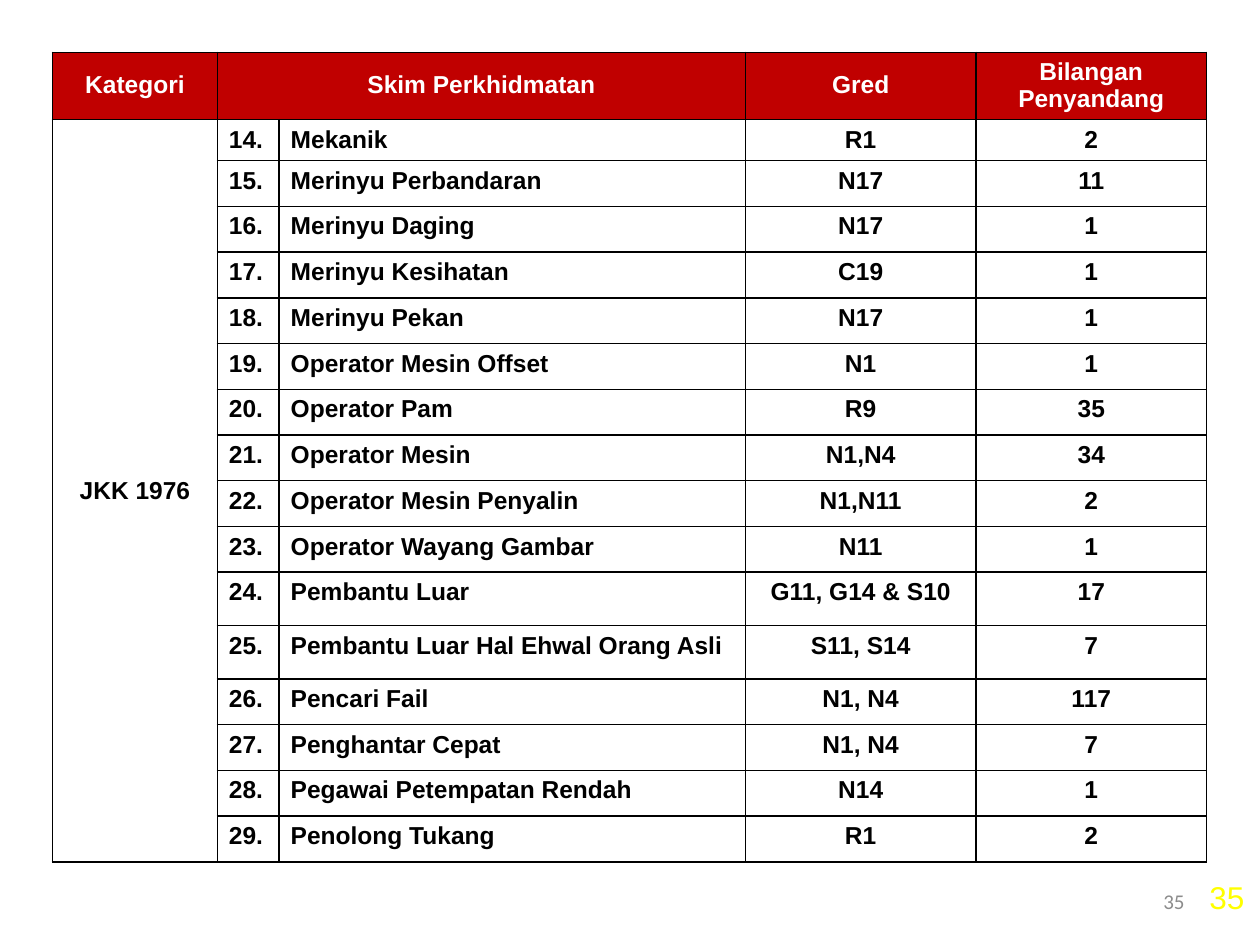
from pptx import Presentation
from pptx.dml.color import RGBColor as RGB
from pptx.enum.text import MSO_ANCHOR as Anchor, PP_ALIGN as Align
from pptx.oxml import parse_xml
from pptx.oxml.ns import nsdecls
from pptx.util import Pt

BLACK = RGB(0x00, 0x00, 0x00)
WHITE = RGB(0xFF, 0xFF, 0xFF)
RED = RGB(0xC0, 0x00, 0x00)
YELLOW = RGB(0xFF, 0xFF, 0x00)
GREY = RGB(0x8C, 0x8C, 0x8C)

HEADS = ["Kategori", "Skim Perkhidmatan", "", "Gred", "Bilangan Penyandang"]
FIRST = 14
POSTS = [
    ("Mekanik", "R1", "2"),
    ("Merinyu Perbandaran", "N17", "11"),
    ("Merinyu Daging", "N17", "1"),
    ("Merinyu Kesihatan", "C19", "1"),
    ("Merinyu Pekan", "N17", "1"),
    ("Operator Mesin Offset", "N1", "1"),
    ("Operator Pam", "R9", "35"),
    ("Operator Mesin", "N1,N4", "34"),
    ("Operator Mesin Penyalin", "N1,N11", "2"),
    ("Operator Wayang Gambar", "N11", "1"),
    ("Pembantu Luar", "G11, G14 & S10", "17"),
    ("Pembantu Luar Hal Ehwal Orang Asli", "S11, S14", "7"),
    ("Pencari Fail", "N1, N4", "117"),
    ("Penghantar Cepat", "N1, N4", "7"),
    ("Pegawai Petempatan Rendah", "N14", "1"),
    ("Penolong Tukang", "R1", "2"),
]
WIDTHS = [94.3, 35.3, 266.4, 131.8, 131.8]
TALL = {24, 25}
JUSTIFIED = range(18, 28)


def write(frame, text, size=14, font="Arial", color=BLACK, bold=False,
          align=Align.LEFT, space=None):
    para = frame.paragraphs[0]
    para.alignment = align
    para.line_spacing = space
    run = para.add_run()
    run.text = text
    run.font.size = Pt(size)
    run.font.name = font
    run.font.bold = bold
    run.font.color.rgb = color


def height(num):
    if num == FIRST:
        return 23.4
    return 30.5 if num in TALL else 26.15


class Deck:
    def __init__(self):
        self.prs = Presentation()
        self.prs.slide_width, self.prs.slide_height = Pt(720), Pt(540)
        self.slide = self.prs.slides.add_slide(self.prs.slide_layouts[6])

    def text(self, text, left, top, width, high, anchor=Anchor.TOP, **style):
        box = self.slide.shapes.add_textbox(Pt(left), Pt(top), Pt(width), Pt(high))
        frame = box.text_frame
        frame.word_wrap = True
        frame.vertical_anchor = anchor
        write(frame, text, **style)

    def table(self, left, top, widths, heights):
        frame = self.slide.shapes.add_table(
            len(heights), len(widths), Pt(left), Pt(top),
            Pt(sum(widths)), Pt(sum(heights)))
        table = frame.table
        table.first_row = table.horz_banding = False
        for col, width in zip(table.columns, widths):
            col.width = Pt(width)
        for row, high in zip(table.rows, heights):
            row.height = Pt(high)
        for cell in table.iter_cells():
            self.border(cell)
            cell.fill.background()
        return table

    def border(self, cell):
        props = cell._tc.get_or_add_tcPr()
        for side in "LRTB":
            props.append(parse_xml(
                f'<a:ln{side} {nsdecls("a")} w="{Pt(1)}"><a:solidFill>'
                f'<a:srgbClr val="{BLACK}"/></a:solidFill></a:ln{side}>'))

    def cell(self, cell, text, fill=None, anchor=Anchor.TOP, **style):
        cell.margin_left = cell.margin_right = Pt(6.6)
        cell.margin_top = cell.margin_bottom = Pt(3.6)
        cell.vertical_anchor = anchor
        if fill is not None:
            cell.fill.solid()
            cell.fill.fore_color.rgb = fill
        if text:
            write(cell.text_frame, text, bold=True, **style)


def main():
    deck = Deck()
    nums = range(FIRST, FIRST + len(POSTS))
    table = deck.table(30, 30, WIDTHS, [38.4] + [height(num) for num in nums])
    table.cell(0, 1).merge(table.cell(0, 2))
    table.cell(1, 0).merge(table.cell(len(POSTS), 0))

    for col, head in enumerate(HEADS):
        deck.cell(table.cell(0, col), head, fill=RED, color=WHITE,
                  anchor=Anchor.MIDDLE, align=Align.CENTER, space=0.95)
    deck.cell(table.cell(1, 0), "JKK 1976", anchor=Anchor.MIDDLE, align=Align.CENTER)
    for row, (num, post) in enumerate(zip(nums, POSTS), 1):
        side = Align.JUSTIFY if num in JUSTIFIED else Align.LEFT
        for col, text in enumerate((f"{num}.", *post), 1):
            deck.cell(table.cell(row, col), text,
                      align=side if col < 3 else Align.CENTER)

    deck.text("35", 684, 498.2, 36, 29, size=18, color=YELLOW)
    deck.text("35", 516, 500.5, 168, 28.8, anchor=Anchor.MIDDLE,
              size=12, font="Calibri", color=GREY, align=Align.RIGHT)
    deck.prs.save("out.pptx")


if __name__ == "__main__":
    main()
